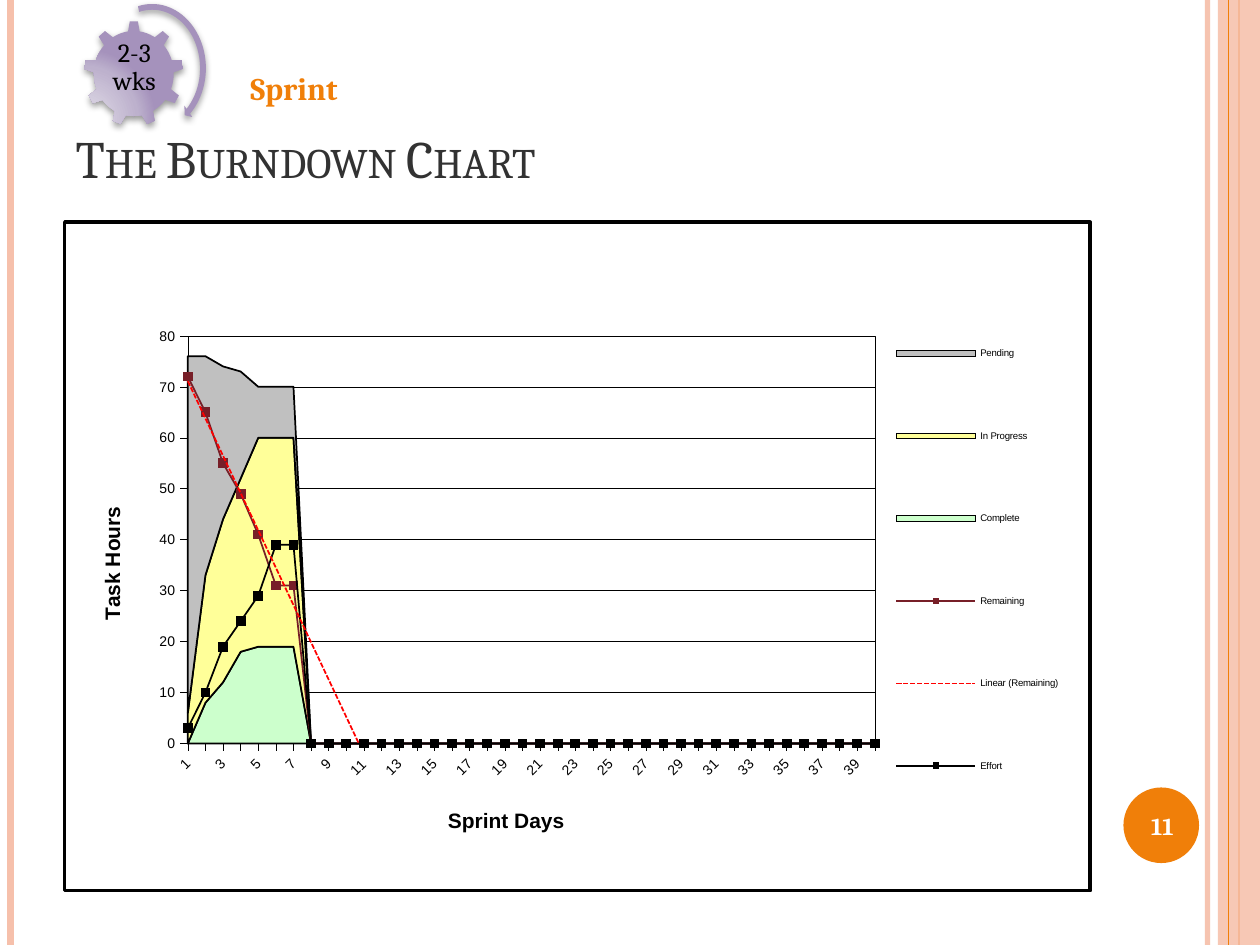
import pptx
import pptx.chart.data
import pptx.dml.color
import pptx.enum.chart
import pptx.enum.shapes
import pptx.enum.text
import pptx.oxml
import pptx.oxml.ns
import pptx.util
from lxml import etree

HUES = {"ink": "000000", "white": "FFFFFF", "title": "323232", "peach": "F6C0AB",
        "orange": "F07F09", "gray": "C0C0C0", "yellow": "FFFF99", "green": "CCFFCC",
        "wine": "771F28", "red": "FF0000"}
FADE = [(0, "D8D1E1"), (30, "D4CDDE"), (75, "BDB1CD"), (100, "A592BC")]
COLS, ROWS = 120, 90
AREAS = [("Complete", [0, 8, 12, 18, 19, 19, 19], "green"),
         ("In Progress", [6, 25, 32, 34, 41, 41, 41], "yellow"),
         ("Pending", [70, 43, 30, 21, 10, 10, 10], "gray")]
LINES = [("Remaining", [72, 65, 55, 49, 41, 31, 31], "wine"),
         ("Effort", [3, 10, 19, 24, 29, 39, 39], "ink")]
DAYS, PLANNED = 40, 14

KIND = pptx.enum.shapes.MSO_SHAPE
ALIGN = pptx.enum.text.PP_ALIGN
ANCHOR = pptx.enum.text.MSO_ANCHOR
qn = pptx.oxml.ns.qn


def rgb(hue):
    return pptx.dml.color.RGBColor.from_string(HUES[hue])


def xml(body):
    """Parse markup, declaring the namespaces on its first tag."""
    head, rest = body.split(">", 1)
    slash = "/" if head.endswith("/") else ""
    head = head.rstrip("/")
    return pptx.oxml.parse_xml(f"{head} {pptx.oxml.ns.nsdecls('a', 'c')}{slash}>{rest}")


def text(frame, words, size=18, hue="ink", font="Cambria", bold=False,
         align=None, anchor=None, inset=None, small=False, space=None):
    """Write one formatted paragraph into a text frame."""
    part = frame.paragraphs[0]
    part.alignment, part.line_spacing = align, space
    run = part.add_run()
    run.text = words
    run.font.size, run.font.name = pptx.util.Pt(size), font
    run.font.bold = bold
    run.font.color.rgb = rgb(hue)
    if small:
        run.font._element.set("cap", "small")
    if anchor is not None:
        frame.vertical_anchor = anchor
    if inset is not None:
        gap = pptx.util.Inches(inset)
        frame.margin_left = frame.margin_right = gap
        frame.margin_top = frame.margin_bottom = gap


def stroke(line, hue, width):
    line.color.rgb = rgb(hue)
    line.width = pptx.util.Pt(width)


def alpha(shape, share):
    for tint in shape._element.spPr.iter(qn("a:srgbClr")):
        etree.SubElement(tint, qn("a:alpha")).set("val", str(share * 1000))


def place(host, index, x, y, w=None, h=None, inner=False):
    """Fix a chart part at shares of the chart's size."""
    for old in host.findall(qn("c:layout")):
        host.remove(old)
    sizes = f'<c:w val="{w}"/><c:h val="{h}"/>' if w else ""
    target = '<c:layoutTarget val="inner"/>' if inner else ""
    host.insert(index, xml(
        f'<c:layout><c:manualLayout>{target}<c:xMode val="edge"/><c:yMode val="edge"/>'
        f'<c:x val="{x}"/><c:y val="{y}"/>{sizes}</c:manualLayout></c:layout>'))


def panel(width):
    return xml(f'<c:spPr><a:solidFill><a:srgbClr val="{HUES["white"]}"/></a:solidFill>'
               f'<a:ln w="{int(width * 12700)}"><a:solidFill>'
               f'<a:srgbClr val="{HUES["ink"]}"/></a:solidFill></a:ln></c:spPr>')


class Page:
    def __init__(self, deck):
        self.wide, self.high = deck.slide_width, deck.slide_height
        self.slide = deck.slides.add_slide(deck.slide_layouts[5])
        self.shapes = self.slide.shapes

    def box(self, x, y, w, h):
        return (int(x * self.wide / COLS), int(y * self.high / ROWS),
                int(w * self.wide / COLS), int(h * self.high / ROWS))

    def title(self, words, *box, **look):
        head = self.shapes.title
        head.left, head.top, head.width, head.height = self.box(*box)
        text(head.text_frame, words, **look)

    def label(self, words, *box, **look):
        item = self.shapes.add_textbox(*self.box(*box))
        item.text_frame.word_wrap = True
        text(item.text_frame, words, **look)
        return item

    def rule(self, col, hue, width):
        x, y, _, end = self.box(col, 0, 0, ROWS)
        item = self.shapes.add_connector(pptx.enum.shapes.MSO_CONNECTOR.STRAIGHT, x, y, x, end)
        stroke(item.line, hue, width)
        etree.SubElement(item._element.spPr, qn("a:effectLst"))
        return item

    def shape(self, kind, *box, hue=None):
        item = self.shapes.add_shape(kind, *self.box(*box))
        item.shadow.inherit = False
        item.line.fill.background()
        if hue:
            item.fill.solid()
            item.fill.fore_color.rgb = rgb(hue)
        return item

    def glow(self, kind, *box):
        """A shape with a lilac radial fade and a soft shadow."""
        item = self.shape(kind, *box)
        item.fill.background()
        props = item._element.spPr
        stops = "".join(f'<a:gs pos="{at * 1000}"><a:srgbClr val="{tint}"/></a:gs>'
                        for at, tint in FADE)
        props.replace(props.find(qn("a:noFill")), xml(
            f'<a:gradFill rotWithShape="1"><a:gsLst>{stops}</a:gsLst><a:path path="circle">'
            '<a:fillToRect l="5000" t="100000" r="120000" b="10000"/></a:path></a:gradFill>'))
        props.find(qn("a:effectLst")).append(xml(
            '<a:outerShdw blurRad="50800" dist="25400" dir="5400000" rotWithShape="0">'
            '<a:srgbClr val="000000"><a:alpha val="40000"/></a:srgbClr></a:outerShdw>'))
        return item

    def axis(self, axis, name, x, y):
        axis.has_title = True
        text(axis.axis_title.text_frame, name, size=12, font="Arial", bold=True)
        place(axis.axis_title._element, 1, x, y)
        axis.major_tick_mark = pptx.enum.chart.XL_TICK_MARK.OUTSIDE
        axis.minor_tick_mark = pptx.enum.chart.XL_TICK_MARK.NONE
        axis.tick_labels.font.size = pptx.util.Pt(8)
        stroke(axis.format.line, "ink", 0.25)

    def chart(self, *box):
        data = pptx.chart.data.CategoryChartData()
        data.categories = [str(day) for day in range(1, DAYS + 1)]
        for name, vals, _ in AREAS + LINES:
            data.add_series(name, vals + [None] * (PLANNED - len(vals)))
        chart = self.shapes.add_chart(pptx.enum.chart.XL_CHART_TYPE.AREA_STACKED,
                                      *self.box(*box), data).chart
        chart.has_title = False
        chart.font.size, chart.font.name = pptx.util.Pt(8), "Arial"
        chart.font.color.rgb = rgb("ink")
        root = chart.element
        plot = root.find(".//" + qn("c:plotArea"))

        # Move the line series into their own plot on the same axes
        area = plot.find(qn("c:areaChart"))
        combo = xml('<c:lineChart><c:grouping val="standard"/><c:varyColors val="0"/>'
                    '<c:marker val="1"/></c:lineChart>')
        for ser in area.findall(qn("c:ser"))[len(AREAS):]:
            combo.find(qn("c:marker")).addprevious(ser)
        for ref in area.findall(qn("c:axId")):
            etree.SubElement(combo, qn("c:axId")).set("val", ref.get("val"))
        area.addnext(combo)

        # Series colours, markers and trend
        stack, lines = chart.plots
        stack.vary_by_categories = False
        for ser, (_, _, hue) in zip(stack.series, AREAS):
            ser.format.fill.solid()
            ser.format.fill.fore_color.rgb = rgb(hue)
            stroke(ser.format.line, "ink", 1)
        for ser, (_, _, hue) in zip(lines.series, LINES):
            ser.smooth = False
            stroke(ser.format.line, hue, 1)
            mark = ser.marker
            mark.style, mark.size = pptx.enum.chart.XL_MARKER_STYLE.SQUARE, 5
            mark.format.fill.solid()
            mark.format.fill.fore_color.rgb = rgb(hue)
            stroke(mark.format.line, hue, 0.75)
        combo.find(qn("c:ser")).find(qn("c:cat")).addprevious(xml(
            '<c:trendline><c:spPr><a:ln w="12700"><a:solidFill>'
            f'<a:srgbClr val="{HUES["red"]}"/></a:solidFill><a:prstDash val="sysDash"/></a:ln>'
            '</c:spPr><c:trendlineType val="linear"/><c:dispRSqr val="0"/>'
            '<c:dispEq val="0"/></c:trendline>'))

        # Axes
        days, hours = chart.category_axis, chart.value_axis
        self.axis(days, "Sprint Days", 0.37, 0.87)
        self.axis(hours, "Task Hours", 0.03, 0.42)
        days.has_major_gridlines = False
        days.tick_labels.font._element.getparent().getparent().getparent().find(
            qn("a:bodyPr")).set("rot", "-2700000")
        days._element.find(qn("c:noMultiLvlLbl")).addprevious(xml('<c:tickLblSkip val="2"/>'))
        hours.minimum_scale, hours.maximum_scale, hours.major_unit = 0, 80, 10
        hours.has_major_gridlines = True
        stroke(hours.major_gridlines.format.line, "ink", 0.25)
        hours._element.find(qn("c:crossBetween")).set("val", "midCat")

        # Legend, frames and gaps
        chart.has_legend = True
        chart.legend.position = pptx.enum.chart.XL_LEGEND_POSITION.RIGHT
        chart.legend.include_in_layout = False
        chart.legend.font.size = pptx.util.Pt(5.5)
        place(chart.legend._element, 1, 0.8, 0.08, 0.18, 0.85)
        place(plot, 0, 0.12, 0.17, 0.67, 0.61, inner=True)
        plot.append(panel(0.25))
        root.find(qn("c:chart")).addnext(panel(2))
        root.find(".//" + qn("c:dispBlanksAs")).set("val", "zero")


def main():
    deck = pptx.Presentation()
    deck.slide_width, deck.slide_height = pptx.util.Inches(10), pptx.util.Inches(7.5)
    page = Page(deck)

    # Side stripes and number disc
    alpha(page.rule(115, "peach", 3), 93)
    page.rule(1, "peach", 4.5)
    page.rule(118, "orange", 1.5)
    alpha(page.shape(KIND.RECTANGLE, 116, 0, 4, ROWS, hue="peach"), 87)
    page.rule(117, "orange", 0.75)
    page.shape(KIND.OVAL, 107, 75, 7.2, 7.2, hue="orange")

    # Title, chart and page number
    page.title("The Burndown Chart", 6, 3.6, 98, 15, size=30, hue="title",
               align=ALIGN.LEFT, anchor=ANCHOR.BOTTOM, small=True)
    page.chart(6, 21, 98, 64)
    page.label("11", 106.7, 75.2, 8, 6.8, size=14, hue="white", bold=True,
               align=ALIGN.CENTER, anchor=ANCHOR.MIDDLE)

    # Sprint gear
    gear = page.glow(KIND.GEAR_9, 8, 2, 9.5, 10)
    span = page.label("2-3 wks", 10, 4, 5.6, 5, size=15, align=ALIGN.CENTER,
                      anchor=ANCHOR.MIDDLE, inset=0.02, space=0.9)
    page.shapes.add_group_shape([gear, span])
    arrow = page.glow(KIND.CIRCULAR_ARROW, 9, 0, 11, 13)
    for spot, val in enumerate([0.05, 3.13, 30.03, 154.24, 0.06]):
        arrow.adjustments[spot] = val
    page.label("Sprint", 16, 6, 24, 4.8, hue="orange", bold=True, align=ALIGN.CENTER)

    deck.save("out.pptx")


if __name__ == "__main__":
    main()
